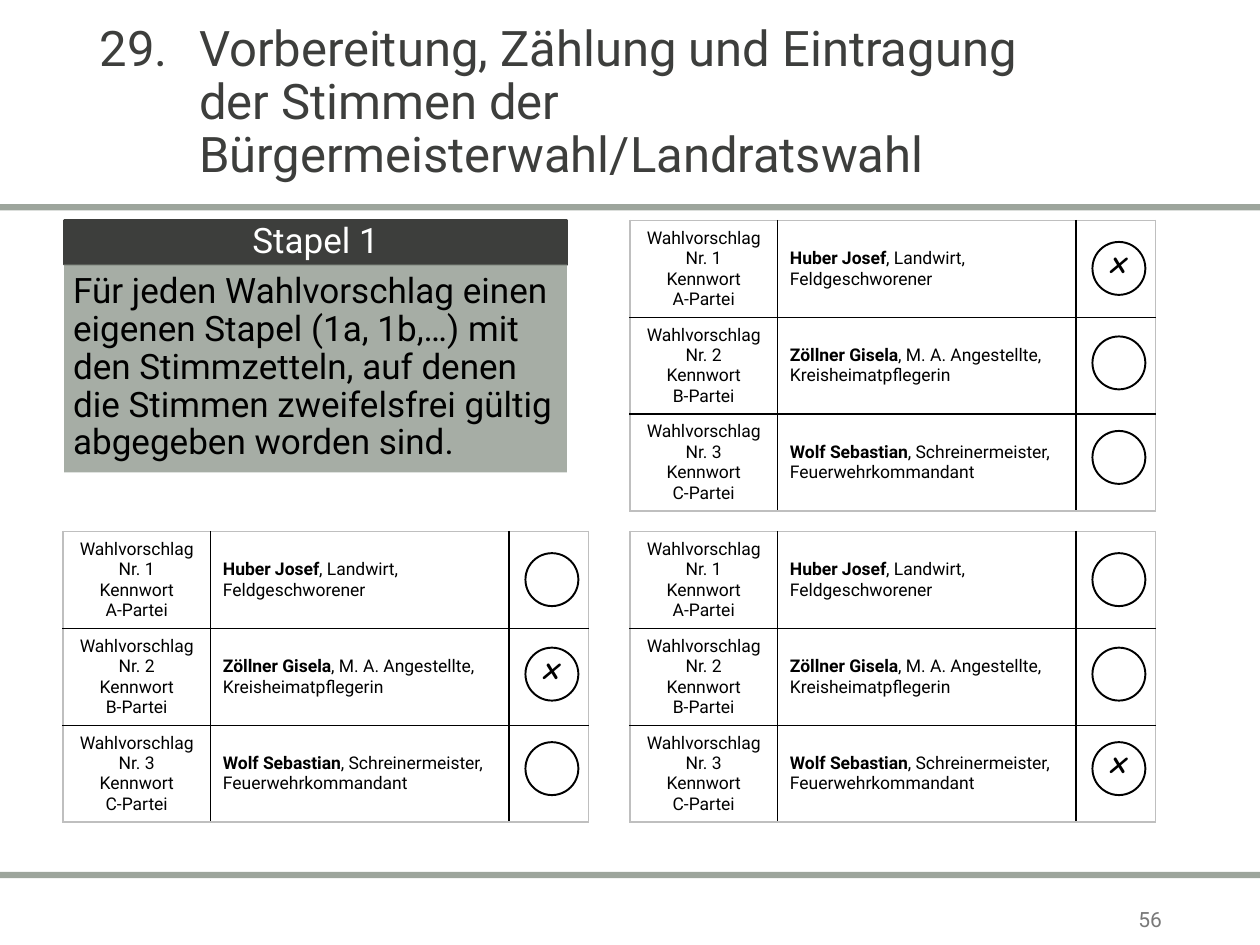
from lxml.etree import SubElement
from pptx import Presentation
from pptx.dml.color import RGBColor
from pptx.enum.shapes import MSO_SHAPE as Shape
from pptx.enum.text import MSO_ANCHOR as Anchor, PP_ALIGN as Align
from pptx.oxml.ns import qn
from pptx.util import Inches, Pt

BLACK = RGBColor(0x00, 0x00, 0x00)
WHITE = RGBColor(0xFF, 0xFF, 0xFF)
CHARCOAL = RGBColor(0x3D, 0x3E, 0x3C)
SAGE = RGBColor(0x9D, 0xA5, 0x9C)
GREY = RGBColor(0x79, 0x79, 0x79)
EDGE = RGBColor(0xBF, 0xBF, 0xBF)

CANDIDATES = [
    ("Nr. 1", "A-Partei", "Huber Josef", ", Landwirt, Feldgeschworener"),
    ("Nr. 2", "B-Partei", "Zöllner Gisela", ", M. A. Angestellte, Kreisheimatpflegerin"),
    ("Nr. 3", "C-Partei", "Wolf Sebastian", ", Schreinermeister, Feuerwehrkommandant"),
]
COLUMN_WIDTHS = (1.17, 2.37, 0.63)
ROW_HEIGHT = 0.75
CIRCLE = 0.42


def write(paragraph, text, size=10, color=BLACK, font="Roboto", bold=False,
          italic=False, align=Align.LEFT, spacing=None):
    """Add one formatted run to a paragraph."""
    run = paragraph.add_run()
    run.text = text
    run.font.name = font
    run.font.size = Pt(size)
    run.font.bold = bold
    run.font.italic = italic
    run.font.color.rgb = color
    paragraph.alignment = align
    if spacing:
        paragraph.line_spacing = spacing


def set_margins(frame, left, top, right, bottom):
    """Set the four inner margins of a text frame in inches."""
    frame.margin_left, frame.margin_top = Inches(left), Inches(top)
    frame.margin_right, frame.margin_bottom = Inches(right), Inches(bottom)


def add_block(slide, kind, left, top, width, height, fill=None):
    """Add a flat preset shape without outline."""
    block = slide.shapes.add_shape(kind, Inches(left), Inches(top), Inches(width), Inches(height))
    block.shadow.inherit = False
    block.line.fill.background()
    if fill is None:
        block.fill.background()
    else:
        block.fill.solid()
        block.fill.fore_color.rgb = fill
    block.text_frame.word_wrap = True
    return block


def add_title(slide, left, top, width, height):
    """Place the numbered heading with a hanging indent."""
    title = slide.shapes.title
    title.left, title.top = Inches(left), Inches(top)
    title.width, title.height = Inches(width), Inches(height)
    title.text_frame.vertical_anchor = Anchor.MIDDLE
    heading = title.text_frame.paragraphs[0]
    properties = heading._p.get_or_add_pPr()
    properties.set("marL", str(Inches(0.79)))
    properties.set("indent", str(-Inches(0.79)))
    write(heading, "29.\tVorbereitung, Zählung und Eintragung der Stimmen der "
          "Bürgermeisterwahl/Landratswahl", size=28, color=CHARCOAL, spacing=0.9)


def add_stack_note(slide, left, top, width, height):
    """Place the dark stack header above its translucent explanation."""
    header_height = 0.35
    header = add_block(slide, Shape.RECTANGLE, left, top, width, header_height, CHARCOAL)
    header.line.color.rgb = CHARCOAL
    header.line.width = Pt(1.5)
    header.text_frame.vertical_anchor = Anchor.MIDDLE
    set_margins(header.text_frame, 0.09, 0.05, 0.09, 0.05)
    write(header.text_frame.paragraphs[0], "Stapel 1", size=20, color=WHITE,
          align=Align.CENTER, spacing=0.9)

    explanation = add_block(slide, Shape.RECTANGLE, left, top + header_height,
                            width, height - header_height, SAGE)
    fill_color = explanation._element.spPr.find(qn("a:solidFill"))[0]
    SubElement(fill_color, qn("a:alpha"), val="90000")
    explanation.text_frame.vertical_anchor = Anchor.TOP
    set_margins(explanation.text_frame, 0.07, 0.07, 0.09, 0.1)
    write(explanation.text_frame.paragraphs[0],
          "Für jeden Wahlvorschlag einen eigenen Stapel (1a, 1b,…) mit den Stimmzetteln, "
          "auf denen die Stimmen zweifelsfrei gültig abgegeben worden sind.",
          size=20, spacing=0.9)


def set_borders(cell, row, column):
    """Draw black inner lines and grey outer edges around a cell."""
    properties = cell._tc.get_or_add_tcPr()
    outer = {"L": column == 0, "R": column == len(COLUMN_WIDTHS) - 1,
             "T": row == 0, "B": row == len(CANDIDATES) - 1}
    for position, (side, is_edge) in enumerate(outer.items()):
        border = properties.makeelement(qn(f"a:ln{side}"), {"w": str(Pt(1))})
        border_fill = SubElement(border, qn("a:solidFill"))
        SubElement(border_fill, qn("a:srgbClr"), val=str(EDGE if is_edge else BLACK))
        properties.insert(position, border)


def add_vote_circle(slide, left, top, marked):
    """Place a voting circle, crossed when marked."""
    circle = add_block(slide, Shape.OVAL, left, top, CIRCLE, CIRCLE)
    circle.line.color.rgb = BLACK
    circle.line.width = Pt(1.1)
    if marked:
        set_margins(circle.text_frame, 0, 0, 0, 0.12)
        circle.text_frame.vertical_anchor = Anchor.MIDDLE
        write(circle.text_frame.paragraphs[0], "x", size=18, font="Comic Neue",
              bold=True, italic=True, align=Align.CENTER)


def add_ballot(slide, left, top, marked_row):
    """Place a ballot table with one vote circle per candidate."""
    width = sum(COLUMN_WIDTHS)
    ballot = slide.shapes.add_table(
        len(CANDIDATES), len(COLUMN_WIDTHS), Inches(left), Inches(top),
        Inches(width), Inches(ROW_HEIGHT * len(CANDIDATES))).table
    ballot.first_row = ballot.horz_banding = False
    for column, column_width in zip(ballot.columns, COLUMN_WIDTHS):
        column.width = Inches(column_width)
    for row, (number, party, name, occupation) in enumerate(CANDIDATES):
        ballot.rows[row].height = Inches(ROW_HEIGHT)
        for column in range(len(COLUMN_WIDTHS)):
            cell = ballot.cell(row, column)
            cell.fill.background()
            cell.vertical_anchor = Anchor.MIDDLE
            set_borders(cell, row, column)
        proposal = ballot.cell(row, 0).text_frame
        for index, line in enumerate(("Wahlvorschlag", number, "Kennwort", party)):
            paragraph = proposal.add_paragraph() if index else proposal.paragraphs[0]
            write(paragraph, line, align=Align.CENTER)
        candidate = ballot.cell(row, 1).text_frame.paragraphs[0]
        write(candidate, name, bold=True)
        write(candidate, occupation)
        add_vote_circle(slide, left + width - 0.5, top + 0.17 + row * ROW_HEIGHT,
                        row == marked_row)


def add_page_number(slide, left, top, width, height):
    """Place the page number at the lower right."""
    frame = slide.shapes.add_textbox(Inches(left), Inches(top),
                                     Inches(width), Inches(height)).text_frame
    frame.word_wrap = True
    frame.vertical_anchor = Anchor.MIDDLE
    write(frame.paragraphs[0], "56", size=12, color=GREY, align=Align.RIGHT)


def main():
    """Build and save the slide."""
    deck = Presentation()
    deck.slide_width, deck.slide_height = Inches(10), Inches(7.5)
    slide = deck.slides.add_slide(deck.slide_layouts[5])
    for rule_top in (1.62, 6.92):
        add_block(slide, Shape.RECTANGLE, 0, rule_top, 10, 0.05, SAGE)
    add_page_number(slide, 8.42, 7.17, 0.9, 0.25)
    add_title(slide, 0.69, 0.08, 7.5, 1.48)
    add_stack_note(slide, 0.51, 1.75, 3.99, 2)
    for marked_row, (left, top) in enumerate([(5, 1.75), (0.5, 4.22), (5, 4.22)]):
        add_ballot(slide, left, top, marked_row)
    deck.save("out.pptx")


if __name__ == "__main__":
    main()
